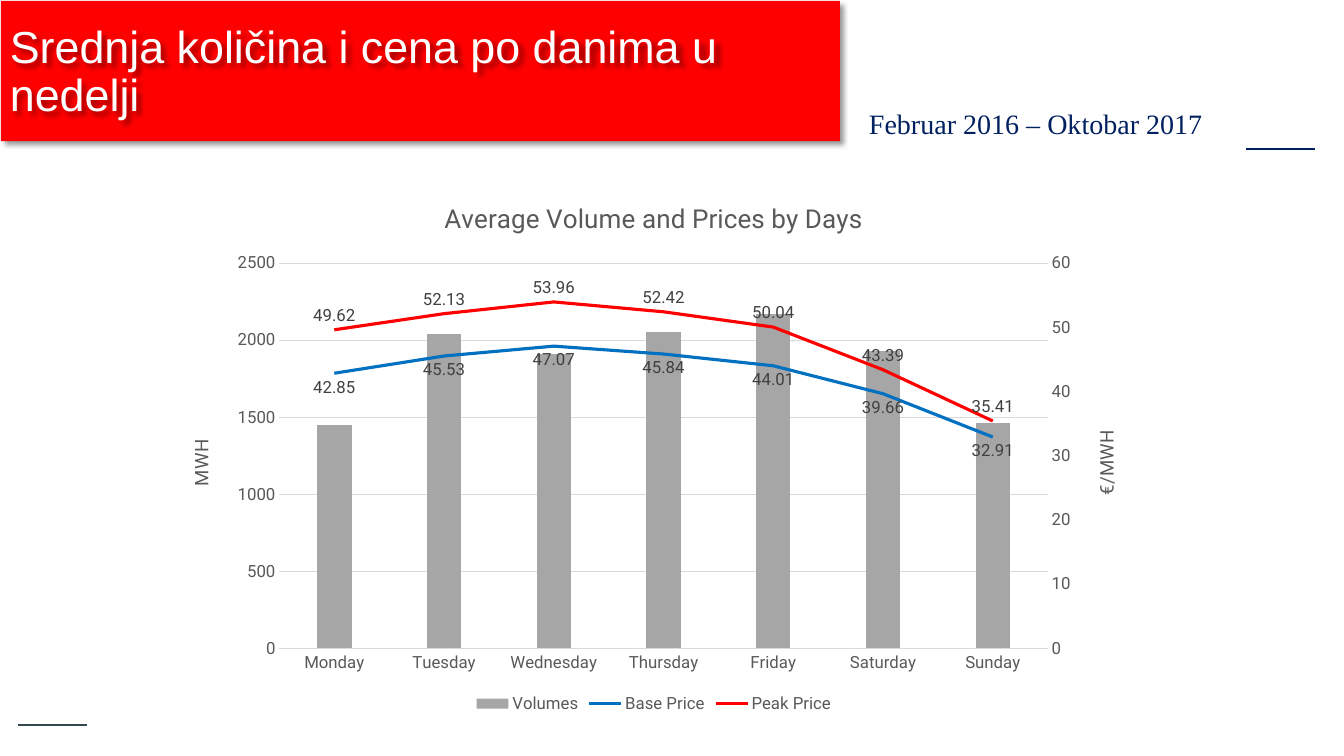
from copy import deepcopy
from pptx import Presentation
from pptx.chart.axis import ValueAxis
from pptx.chart.data import CategoryChartData
from pptx.dml.color import RGBColor
from pptx.enum.chart import XL_CHART_TYPE as Kind, XL_LABEL_POSITION as Spot
from pptx.enum.chart import XL_LEGEND_POSITION as Side, XL_MARKER_STYLE as Mark
from pptx.enum.chart import XL_TICK_MARK as Tick
from pptx.enum.shapes import MSO_CONNECTOR as Conn, MSO_SHAPE as Shape
from pptx.enum.text import MSO_ANCHOR as Anchor
from pptx.oxml import parse_xml
from pptx.oxml.ns import nsdecls, qn
from pptx.util import Inches, Pt

RED = RGBColor(0xFF, 0, 0)
BLUE = RGBColor(0, 0x70, 0xC0)
NAVY = RGBColor(0, 0x20, 0x60)
SLATE = RGBColor(0x37, 0x47, 0x4F)
WHITE = RGBColor(0xFF, 0xFF, 0xFF)
BLACK = RGBColor(0, 0, 0)
GRAY = RGBColor(0xA6, 0xA6, 0xA6)
PALE = RGBColor(0xD9, 0xD9, 0xD9)
DIM = RGBColor(0x59, 0x59, 0x59)
DARK = RGBColor(0x40, 0x40, 0x40)

TITLE = "Srednja količina i cena po danima u nedelji"
PERIOD = "Februar 2016 – Oktobar 2017"
HEAD = "Average Volume and Prices by Days"
DAYS = ["Monday", "Tuesday", "Wednesday", "Thursday", "Friday", "Saturday", "Sunday"]
SERIES = {
    "Volumes": [1450, 2040, 1910, 2050, 2170, 1930, 1460],
    "Base Price": [42.85, 45.53, 47.07, 45.84, 44.01, 39.66, 32.91],
    "Peak Price": [49.62, 52.13, 53.96, 52.42, 50.04, 43.39, 35.41],
}
LINES = [(BLUE, Spot.BELOW), (RED, Spot.ABOVE)]
RULES = [(0.18, 7.19, SLATE), (12.36, 1.48, NAVY)]
RULE = 0.68
PLOT = {"x": 0.116, "y": 0.154, "w": 0.788, "h": 0.717}


def style(font, size, color, name="Roboto"):
    font.size, font.name, font.bold = Pt(size), name, False
    font.color.rgb = color


def shade(shape):
    props = shape.element.spPr
    for old in props.findall(qn("a:effectLst")):
        props.remove(old)
    props.append(parse_xml(
        f'<a:effectLst {nsdecls("a")}><a:outerShdw blurRad="50800" dist="38100" '
        'dir="2700000" algn="tl" rotWithShape="0"><a:srgbClr val="000000">'
        '<a:alpha val="40000"/></a:srgbClr></a:outerShdw></a:effectLst>'))


def write(slide, area, text, size, color, name):
    box = slide.shapes.add_textbox(*map(Inches, area))
    frame = box.text_frame
    frame.word_wrap = True
    frame.text = text
    style(frame.paragraphs[0].runs[0].font, size, color, name)
    return box


def caption(owner, text, size):
    frame = owner.text_frame
    frame.text = text
    style(frame.paragraphs[0].runs[0].font, size, DIM)


def scale(axis, top, step, text):
    axis.minimum_scale, axis.maximum_scale, axis.major_unit = 0, top, step
    caption(axis.axis_title, text, 13.3)


def plain(axis):
    axis.major_tick_mark = axis.minor_tick_mark = Tick.NONE
    style(axis.tick_labels.font, 12, DIM)


def split(area):
    bars = area.find(qn("c:barChart"))
    group = parse_xml(
        f'<c:lineChart {nsdecls("c")}><c:grouping val="standard"/>'
        '<c:varyColors val="0"/><c:marker val="1"/>'
        '<c:axId val="5001"/><c:axId val="5002"/></c:lineChart>')
    for ser in bars.findall(qn("c:ser"))[1:]:
        for flag in ser.findall(qn("c:invertIfNegative")):
            ser.remove(flag)
        group.find(qn("c:marker")).addprevious(ser)
    bars.addnext(group)


def second(area):
    cat = deepcopy(area.find(qn("c:catAx")))
    val = deepcopy(area.find(qn("c:valAx")))
    for axis, own, other in ((cat, "5001", "5002"), (val, "5002", "5001")):
        axis.find(qn("c:axId")).set("val", own)
        axis.find(qn("c:crossAx")).set("val", other)
    cat.find(qn("c:delete")).set("val", "1")
    val.find(qn("c:axPos")).set("val", "r")
    val.find(qn("c:crosses")).set("val", "max")
    area.find(qn("c:valAx")).addnext(val)
    val.addnext(cat)
    right = ValueAxis(val)
    right.has_major_gridlines = False
    scale(right, 60, 10, "€/MWH")


def place(area):
    for old in area.findall(qn("c:layout")):
        area.remove(old)
    spots = "".join(f'<c:{key} val="{num}"/>' for key, num in PLOT.items())
    area.insert(0, parse_xml(
        f'<c:layout {nsdecls("c")}><c:manualLayout><c:layoutTarget val="inner"/>'
        f'<c:xMode val="edge"/><c:yMode val="edge"/>{spots}</c:manualLayout></c:layout>'))
    for title in area.iter(qn("c:title")):
        body = title.find(".//" + qn("a:bodyPr"))
        body.set("rot", "-5400000")
        body.set("vert", "horz")


def draw(slide):
    data = CategoryChartData()
    data.categories = DAYS
    for name, vals in SERIES.items():
        data.add_series(name, vals)
    area = map(Inches, (1.65, 1.79, 9.67, 5.33))
    chart = slide.shapes.add_chart(Kind.COLUMN_CLUSTERED, *area, data).chart
    style(chart.font, 10, BLACK)
    chart.has_title = True
    caption(chart.chart_title, HEAD, 18.6)
    chart.has_legend = True
    chart.legend.position = Side.BOTTOM
    chart.legend.include_in_layout = False
    style(chart.legend.font, 12, DIM)

    days, left = chart.category_axis, chart.value_axis
    plain(days)
    plain(left)
    days.format.line.color.rgb = PALE
    days.format.line.width = Pt(0.75)
    left.format.line.fill.background()
    left.has_major_gridlines = True
    grid = left.major_gridlines.format.line
    grid.color.rgb, grid.width = PALE, Pt(0.75)
    scale(left, 2500, 500, "MWH")

    plot = chart.element.find(".//" + qn("c:plotArea"))
    split(plot)
    second(plot)
    place(plot)

    bars, prices = chart.plots
    bars.gap_width, bars.overlap, bars.vary_by_categories = 219, -27, False
    fill = bars.series[0].format.fill
    fill.solid()
    fill.fore_color.rgb = GRAY
    for ser, (color, spot) in zip(prices.series, LINES):
        ser.smooth = False
        ser.marker.style = Mark.NONE
        ser.format.line.color.rgb = color
        ser.format.line.width = Pt(2.25)
        tags = ser.data_labels
        tags.show_value, tags.position = True, spot
        tags.number_format, tags.number_format_is_linked = "0.00", False
        style(tags.font, 12, DARK)


def main():
    deck = Presentation()
    deck.slide_width, deck.slide_height = Inches(13.33), Inches(7.5)
    slide = deck.slides.add_slide(deck.slide_layouts[6])

    band = slide.shapes.add_shape(Shape.RECTANGLE, *map(Inches, (0.01, 0.01, 8.32, 1.39)))
    band.fill.solid()
    band.fill.fore_color.rgb = RED
    band.line.fill.background()
    shade(band)

    for x, y, color in RULES:
        rule = slide.shapes.add_connector(
            Conn.STRAIGHT, *map(Inches, (x, y, x + RULE, y)))
        rule.line.color.rgb, rule.line.width = color, Pt(1.5)
        rule.element.spPr.append(parse_xml(f'<a:effectLst {nsdecls("a")}/>'))

    title = write(slide, (0, 0, 8.37, 1.45), TITLE, 32, WHITE, "Arial")
    title.text_frame.vertical_anchor = Anchor.MIDDLE
    title.text_frame.paragraphs[0].line_spacing = 0.9
    shade(title)
    draw(slide)
    write(slide, (8.52, 1.01, 4.06, 0.44), PERIOD, 20, NAVY, "Times New Roman")
    deck.save("out.pptx")


if __name__ == "__main__":
    main()
